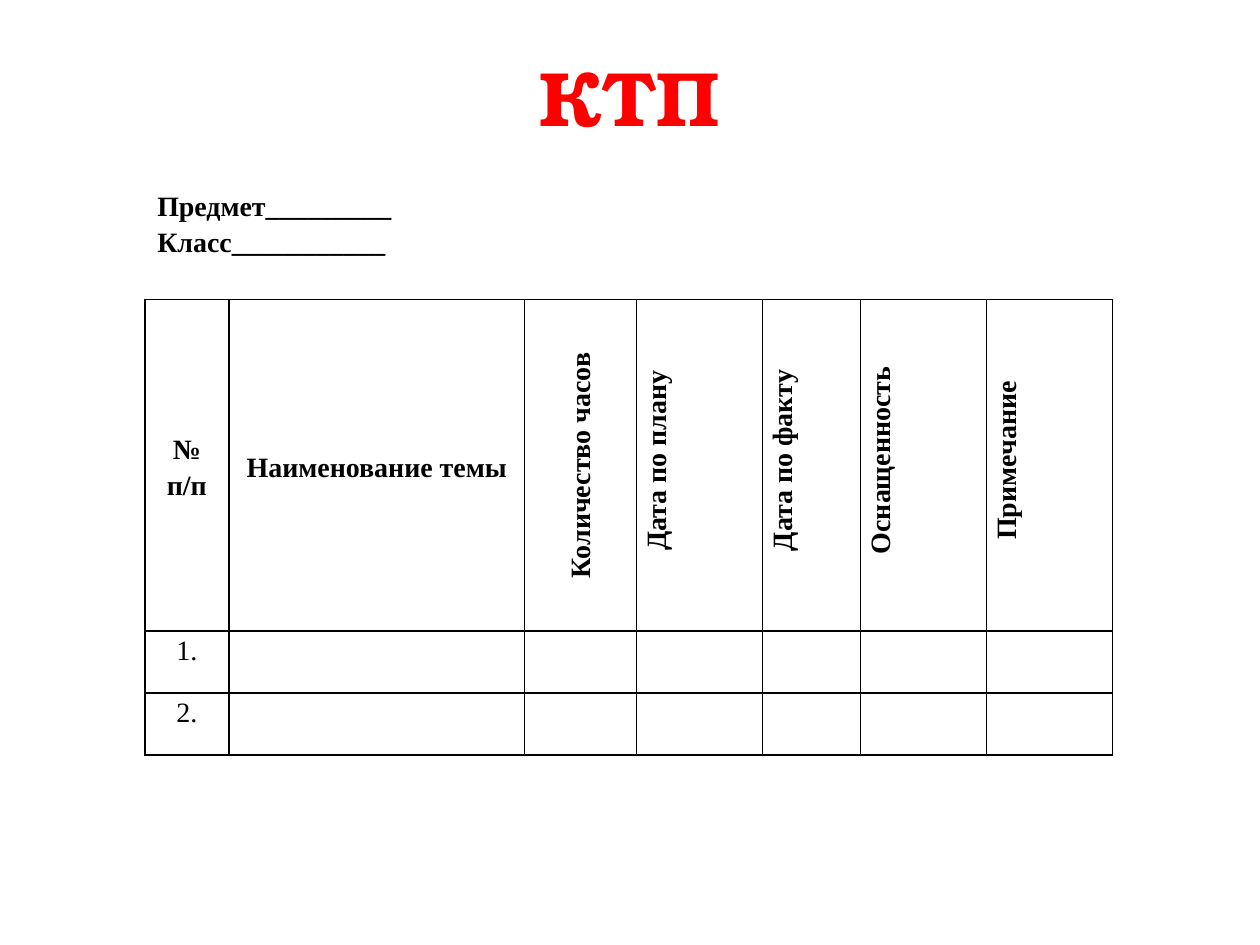
from copy import deepcopy
from dataclasses import dataclass

from lxml.etree import SubElement
from pptx import Presentation
from pptx.dml.color import RGBColor as Rgb
from pptx.enum.text import MSO_ANCHOR as Anchor, PP_ALIGN as Align
from pptx.oxml.ns import qn
from pptx.util import Pt


@dataclass(frozen=True)
class Theme:
    title_font: str = "TeX Gyre Bonum"
    body_font: str = "Times New Roman"
    title_size: int = 44
    body_size: int = 16
    accent: str = "FF0000"
    ink: str = "000000"


def write(frame, text, *, font, size, color, bold=True, align=Align.LEFT,
          spacing=1.0, indent=0):
    """Fill a text frame: a list gives paragraphs, a newline a line break."""
    lines = [text] if isinstance(text, str) else text
    for index, line in enumerate(lines):
        paragraph = frame.add_paragraph() if index else frame.paragraphs[0]
        paragraph.text = line
        paragraph.alignment = align
        paragraph.line_spacing = spacing
        if indent:
            properties = paragraph._p.get_or_add_pPr()
            properties.set("marL", str(Pt(indent)))
            properties.set("indent", "0")
        for run in paragraph.runs:
            run.font.name = font
            run.font.size = Pt(size)
            run.font.bold = bold
            run.font.color.rgb = Rgb.from_string(color)
        # Line breaks take the format of the text beside them
        for line_break in paragraph._p.findall(qn("a:br")):
            line_break.append(deepcopy(paragraph.runs[0]._r.rPr))


class SlideBuilder:
    def __init__(self, slide, theme):
        self.slide = slide
        self.theme = theme

    def text(self, text, left, top, width, height, anchor, **style):
        box = self.slide.shapes.add_textbox(Pt(left), Pt(top), Pt(width), Pt(height))
        box.text_frame.word_wrap = True
        box.text_frame.vertical_anchor = anchor
        write(box.text_frame, text, **style)

    def table(self, left, top, widths, heights):
        table = self.slide.shapes.add_table(
            len(heights), len(widths), Pt(left), Pt(top),
            Pt(sum(widths)), Pt(sum(heights))).table
        table.first_row = table.horz_banding = False
        for column, width in zip(table.columns, widths):
            column.width = Pt(width)
        for row, height in zip(table.rows, heights):
            row.height = Pt(height)
        for cell in table.iter_cells():
            self.outline(cell)
            cell.fill.background()
        return table

    def outline(self, cell):
        properties = cell._tc.get_or_add_tcPr()
        for side in ("lnL", "lnR", "lnT", "lnB"):
            line = SubElement(properties, qn(f"a:{side}"), w=str(Pt(1)))
            fill = SubElement(line, qn("a:solidFill"))
            SubElement(fill, qn("a:srgbClr"), val=self.theme.ink)

    def cell(self, cell, text, anchor=Anchor.TOP, upright=False, **style):
        cell.margin_left = cell.margin_right = Pt(5)
        cell.margin_top = cell.margin_bottom = 0
        cell.vertical_anchor = anchor
        if upright:
            cell._tc.get_or_add_tcPr().set("vert", "vert270")
        write(cell.text_frame, text, font=self.theme.body_font,
              size=self.theme.body_size, color=self.theme.ink,
              align=Align.CENTER, spacing=1.15, **style)


def main():
    deck = Presentation()
    deck.slide_width, deck.slide_height = Pt(720), Pt(540)
    theme = Theme()
    page = SlideBuilder(deck.slides.add_slide(deck.slide_layouts[6]), theme)

    # Title
    page.text("КТП", 49.5, 29, 621, 58, Anchor.MIDDLE, font=theme.title_font,
              size=theme.title_size, color=theme.accent,
              align=Align.CENTER, spacing=0.9)

    # Lesson plan table
    plan = page.table(82.8, 171.2, widths=[48, 169, 64, 72, 56, 72, 72],
                      heights=[189.5, 35.3, 35.3])
    level_headings = ["№ п/п", "Наименование темы"]
    upright_headings = ["\nКоличество часов\n", "Дата по плану", "Дата по факту",
                        "Оснащенность", "Примечание"]
    for column, heading in enumerate(level_headings):
        page.cell(plan.cell(0, column), heading, Anchor.MIDDLE)
    for column, heading in enumerate(upright_headings, len(level_headings)):
        page.cell(plan.cell(0, column), heading, Anchor.MIDDLE, upright=True,
                  indent=0 if "\n" in heading else 5.65)
    for number in (1, 2):
        page.cell(plan.cell(number, 0), f"{number}.", bold=False)

    # Subject and class
    page.text(["Предмет_________", "Класс___________"], 82.8, 103.5, 355, 67.5,
              Anchor.TOP, font=theme.body_font, size=theme.body_size,
              color=theme.ink, spacing=1.05)

    deck.save("out.pptx")


if __name__ == "__main__":
    main()
